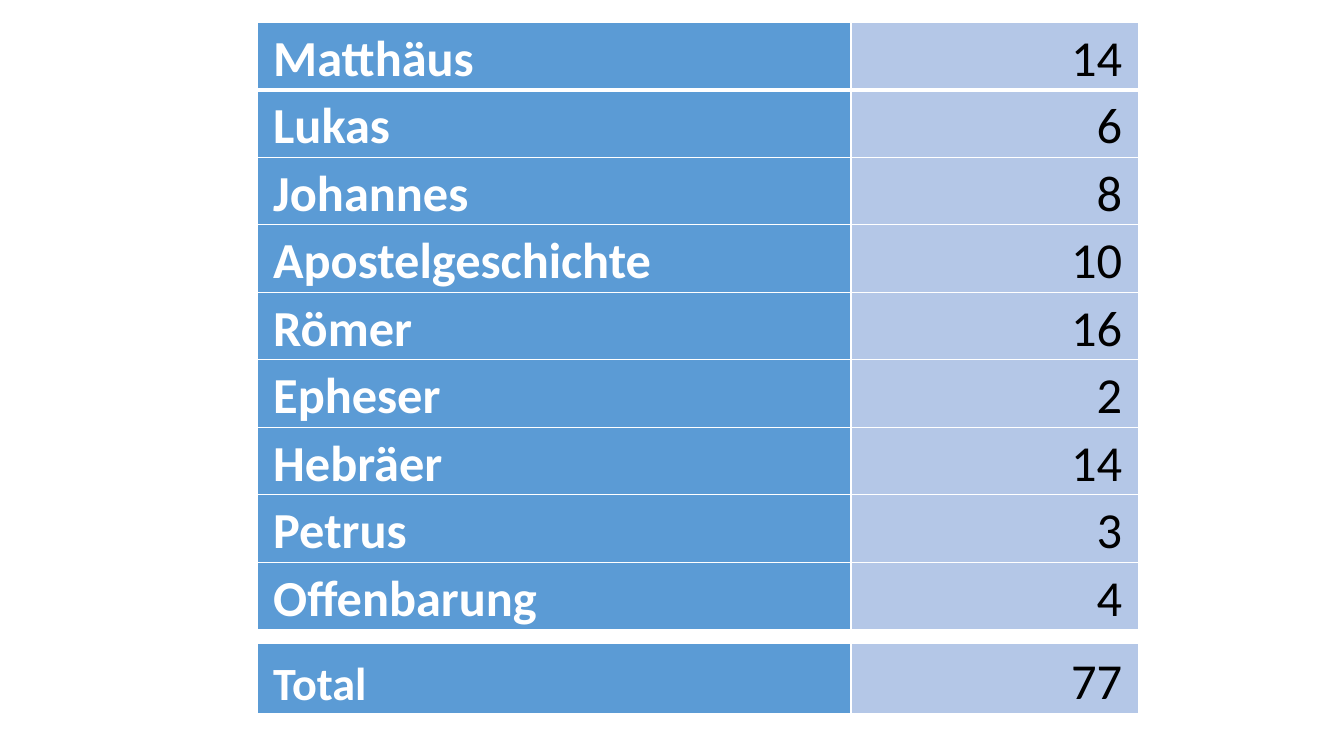
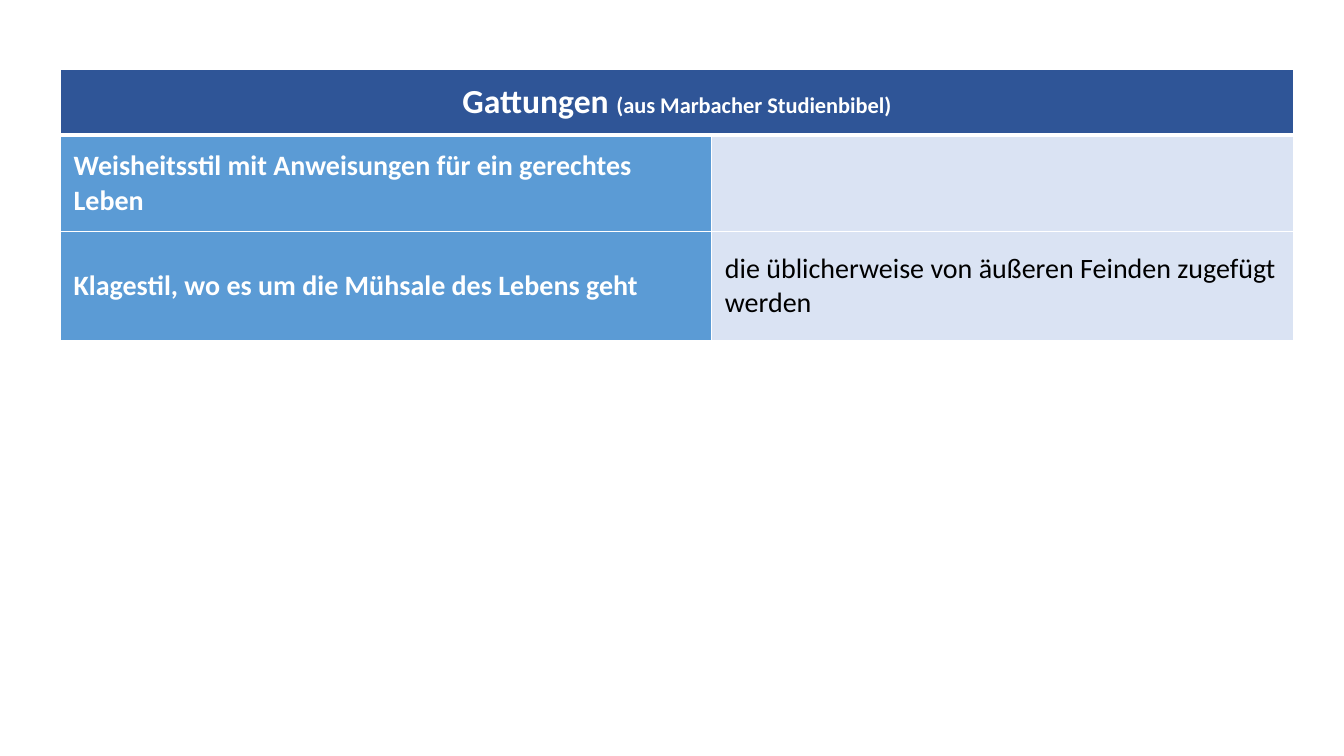
"""Build two table slides on biblical books and genres."""
from dataclasses import dataclass, field

from lxml.etree import SubElement
from pptx import Presentation
from pptx.dml.color import RGBColor
from pptx.enum.text import MSO_ANCHOR, PP_ALIGN
from pptx.oxml.ns import qn
from pptx.presentation import Presentation as Deck
from pptx.slide import Slide
from pptx.table import _Cell
from pptx.util import Emu, Pt

PX = 9144


@dataclass(frozen=True)
class Theme:
    """Colours, type sizes and rule widths shared by the slides."""
    font: str = "Calibri"
    white: str = "FFFFFF"
    black: str = "000000"
    header: str = "2F5597"
    label: str = "5B9BD5"
    value: str = "B4C7E7"
    detail: str = "DAE3F3"
    count_size: int = 36
    total_size: int = 33
    title_size: int = 24
    body_size: int = 20
    source_size: int = 16
    spacer_size: int = 1
    rule: int = 1
    header_rule: int = 3


THEME = Theme()


@dataclass(frozen=True)
class Span:
    """A stretch of text in one size."""
    text: str
    size: int


@dataclass(frozen=True)
class CellSpec:
    """Text and look of one table cell."""
    fill: str
    spans: tuple[Span, ...] = ()
    color: str = THEME.white
    bold: bool = True
    align: PP_ALIGN = PP_ALIGN.LEFT
    empty_size: int = THEME.body_size
    columns: int = 1


@dataclass(frozen=True)
class TableSpec:
    """Place, grid and cells of one table, in px."""
    left: int
    top: int
    widths: tuple[int, ...]
    heights: tuple[int, ...]
    inset: int
    anchor: MSO_ANCHOR
    rows: list[tuple[CellSpec, ...]] = field(default_factory=list)


def px(length: int) -> Emu:
    """Turn px into EMU."""
    return Emu(length * PX)


def apply(target: object, values: dict[str, object]) -> None:
    """Set each named attribute on the target."""
    for name, value in values.items():
        setattr(target, name, value)


def draw_borders(cell: _Cell, row: int) -> None:
    """Rule the cell in white, with a heavy rule under the first row."""
    widths = {
        "a:lnL": THEME.rule,
        "a:lnR": THEME.rule,
        "a:lnT": THEME.header_rule if row == 1 else THEME.rule,
        "a:lnB": THEME.header_rule if row == 0 else THEME.rule,
    }
    properties = cell._tc.get_or_add_tcPr()
    for tag, width in widths.items():
        line = SubElement(properties, qn(tag), w=str(Pt(width)))
        fill = SubElement(line, qn("a:solidFill"))
        SubElement(fill, qn("a:srgbClr"), val=THEME.white)


def fill_cell(cell: _Cell, spec: CellSpec, table: TableSpec, row: int) -> None:
    """Give a cell its borders, fill and text."""
    draw_borders(cell, row)
    cell.fill.solid()
    cell.fill.fore_color.rgb = RGBColor.from_string(spec.fill)
    apply(cell, {
        "margin_left": px(table.inset), "margin_right": px(table.inset),
        "margin_top": 0, "margin_bottom": 0, "vertical_anchor": table.anchor,
    })
    para = cell.text_frame.paragraphs[0]
    para.alignment = spec.align
    for span in spec.spans:
        run = para.add_run()
        run.text = span.text
        apply(run.font, {"name": THEME.font, "size": Pt(span.size), "bold": spec.bold})
        run.font.color.rgb = RGBColor.from_string(spec.color)
    if not spec.spans:
        SubElement(para._p, qn("a:endParaRPr"), sz=str(spec.empty_size * 100))


def draw_table(page: Slide, spec: TableSpec) -> None:
    """Add a table and fill its cells."""
    frame = page.shapes.add_table(
        len(spec.heights), len(spec.widths), px(spec.left), px(spec.top),
        px(sum(spec.widths)), px(sum(spec.heights)))
    table = frame.table
    apply(table, {"first_row": False, "horz_banding": False})
    for column, width in zip(table.columns, spec.widths):
        column.width = px(width)
    for line, height in zip(table.rows, spec.heights):
        line.height = px(height)
    for row, cells in enumerate(spec.rows):
        for column, cell_spec in enumerate(cells):
            cell = table.cell(row, column)
            if cell_spec.columns > 1:
                cell.merge(table.cell(row, column + cell_spec.columns - 1))
            fill_cell(cell, cell_spec, spec, row)


def count_row(book: str, count: int, size: int = THEME.count_size) -> tuple[CellSpec, ...]:
    """Pair a book with its right-aligned count."""
    return (
        CellSpec(THEME.label, (Span(book, size),)),
        CellSpec(THEME.value, (Span(str(count), THEME.count_size),),
                 color=THEME.black, bold=False, align=PP_ALIGN.RIGHT),
    )


def genre_row(genre: str, detail: str = "") -> tuple[CellSpec, ...]:
    """Pair a genre with its explanation."""
    spans = (Span(detail, THEME.body_size),) if detail else ()
    return (
        CellSpec(THEME.label, (Span(genre, THEME.body_size),)),
        CellSpec(THEME.detail, spans, color=THEME.black, bold=False),
    )


def book_table() -> TableSpec:
    """Describe the counts per book with their total."""
    counts = {
        "Matthäus": 14, "Lukas": 6, "Johannes": 8, "Apostelgeschichte": 10,
        "Römer": 16, "Epheser": 2, "Hebräer": 14, "Petrus": 3, "Offenbarung": 4,
    }
    spacer = CellSpec(THEME.white, empty_size=THEME.spacer_size)
    rows = [count_row(book, count) for book, count in counts.items()]
    rows += [(spacer, spacer), count_row("Total", sum(counts.values()), THEME.total_size)]
    heights = (67,) * len(counts) + (14, 69)
    return TableSpec(255, 22, (589, 285), heights, 16, MSO_ANCHOR.BOTTOM, rows)


def genre_table() -> TableSpec:
    """Describe the genres under one merged heading."""
    heading = CellSpec(
        THEME.header,
        (Span("Gattungen ", THEME.title_size),
         Span("(aus Marbacher Studienbibel)", THEME.source_size)),
        align=PP_ALIGN.CENTER, columns=2)
    rows = [
        (heading,),
        genre_row("Weisheitsstil mit Anweisungen für ein gerechtes Leben"),
        genre_row("Klagestil, wo es um die Mühsale des Lebens geht",
                  "die üblicherweise von äußeren Feinden zugefügt werden"),
    ]
    return TableSpec(60, 69, (646, 577), (65, 96, 108), 13, MSO_ANCHOR.MIDDLE, rows)


def main() -> None:
    """Build and save the deck."""
    deck: Deck = Presentation()
    apply(deck, {"slide_width": px(1333), "slide_height": px(750)})
    for spec in (book_table(), genre_table()):
        page = deck.slides.add_slide(deck.slide_layouts[6])
        draw_table(page, spec)
    deck.save("out.pptx")


if __name__ == "__main__":
    main()
